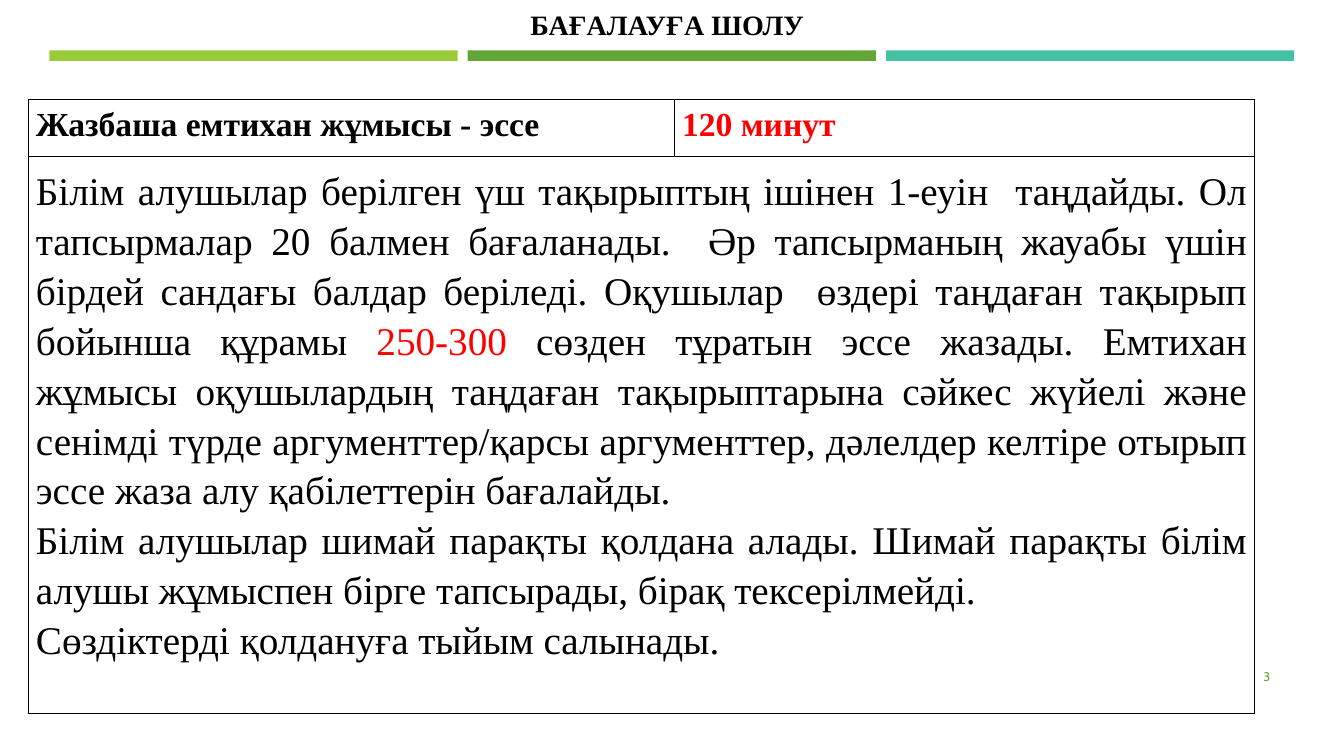
from dataclasses import dataclass

from lxml.etree import SubElement
from pptx import Presentation
from pptx.dml.color import RGBColor
from pptx.enum.shapes import MSO_SHAPE as Shape
from pptx.enum.text import MSO_ANCHOR as Anchor, PP_ALIGN as Align
from pptx.oxml.ns import qn
from pptx.util import Pt


@dataclass(frozen=True)
class Theme:
    black: str = "000000"
    red: str = "FF0000"
    green: str = "63A537"
    bars: tuple = ("99CB38", "63A537", "44C1A3")
    serif: str = "Times New Roman"
    sans: str = "Cabin"
    title: int = 20
    header: int = 24
    body: int = 28
    number: int = 9
    border: int = 1


THEME = Theme()
HEADINGS = (("Жазбаша емтихан жұмысы - эссе", THEME.black), ("120 минут", THEME.red))
RULES = (
    (
        ("Білім алушылар берілген үш тақырыптың ішінен 1-еуін  таңдайды. "
         "Ол тапсырмалар 20 балмен бағаланады.  Әр тапсырманың жауабы үшін "
         "бірдей сандағы балдар беріледі. Оқушылар  өздері таңдаған тақырып "
         "бойынша құрамы ", THEME.black),
        ("250-300 ", THEME.red),
        ("сөзден тұратын эссе жазады. Емтихан жұмысы оқушылардың таңдаған "
         "тақырыптарына сәйкес жүйелі және сенімді түрде аргументтер/қарсы "
         "аргументтер, дәлелдер келтіре отырып эссе жаза алу қабілеттерін "
         "бағалайды. ", THEME.black),
    ),
    (("Білім алушылар шимай парақты қолдана алады. Шимай парақты білім алушы "
      "жұмыспен бірге тапсырады, бірақ тексерілмейді. ", THEME.black),),
    (("Сөздіктерді қолдануға тыйым салынады.", THEME.black),),
)


def place(shape, box):
    shape.left, shape.top, shape.width, shape.height = map(Pt, box)


def style(span, size, color, bold=False, face=THEME.serif):
    span.font.name, span.font.size, span.font.bold = face, Pt(size), bold
    span.font.color.rgb = RGBColor.from_string(color)


def write(para, pieces, size, align, bold=False, face=THEME.serif):
    para.alignment = align
    for text, color in pieces:
        span = para.add_run()
        span.text = text
        style(span, size, color, bold, face)


def add_bars(page, box, gap=7.2):
    left, top, width, height = box
    count = len(THEME.bars)
    bar_width = (width - gap * (count - 1)) / count
    for index, color in enumerate(THEME.bars):
        bar = page.shapes.add_shape(Shape.RECTANGLE, 0, 0, 0, 0)
        place(bar, (left + index * (bar_width + gap), top, bar_width, height))
        bar.shadow.inherit = False
        bar.fill.solid()
        bar.fill.fore_color.rgb = RGBColor.from_string(color)
        bar.line.fill.background()


def add_title(page, box):
    title = page.shapes.title
    place(title, box)
    frame = title.text_frame
    frame.word_wrap = True
    frame.vertical_anchor = Anchor.BOTTOM
    write(frame.paragraphs[0], [("БАҒАЛАУҒА ШОЛУ", THEME.black)],
          THEME.title, Align.CENTER, bold=True)


def add_number(page, box):
    number = page.shapes.add_textbox(*map(Pt, box))
    frame = number.text_frame
    frame.word_wrap = True
    frame.vertical_anchor = Anchor.MIDDLE
    write(frame.paragraphs[0], [("3", THEME.green)], THEME.number,
          Align.RIGHT, face=THEME.sans)


def format_cell(cell):
    cell.margin_left = cell.margin_right = Pt(5.2)
    cell.margin_top = cell.margin_bottom = Pt(5.5)
    properties = cell._tc.get_or_add_tcPr()
    for side in ("lnL", "lnR", "lnT", "lnB"):
        line = SubElement(properties, qn(f"a:{side}"), w=str(Pt(THEME.border)))
        SubElement(SubElement(line, qn("a:solidFill")), qn("a:srgbClr"), val=THEME.black)
    cell.fill.background()


def add_exam_table(page, box, first_column=461.5, header_height=41, line_pitch=13):
    table = page.shapes.add_table(2, 2, *map(Pt, box)).table
    table.first_row = table.horz_banding = False
    table.columns[0].width = Pt(first_column)
    table.columns[1].width = Pt(box[2] - first_column)
    table.rows[0].height = Pt(header_height)
    table.rows[1].height = Pt(box[3] - header_height)
    for cell in table.iter_cells():
        format_cell(cell)

    # Header row: its text sits one line pitch lower
    for column, heading in enumerate(HEADINGS):
        cell = table.cell(0, column)
        cell.margin_top += Pt(line_pitch)
        para = cell.text_frame.paragraphs[0]
        para.line_spacing = Pt(line_pitch)
        write(para, [heading], THEME.header, Align.LEFT, bold=True)

    # Exam rules across both columns
    rules = table.cell(1, 0)
    rules.merge(table.cell(1, 1))
    frame = rules.text_frame
    for index, pieces in enumerate(RULES):
        para = frame.add_paragraph() if index else frame.paragraphs[0]
        para.line_spacing = 1.15
        write(para, pieces, THEME.body, Align.JUSTIFY)


def main():
    deck = Presentation()
    deck.slide_width, deck.slide_height = Pt(960), Pt(540)
    page = deck.slides.add_slide(deck.slide_layouts[5])
    add_bars(page, (35.3, 36, 889.2, 7.5))
    add_title(page, (0, -13, 953.3, 46))
    add_number(page, (831.6, 468.7, 82.8, 28.8))
    add_exam_table(page, (20.5, 71, 875.5, 408))
    deck.save("out.pptx")


if __name__ == "__main__":
    main()
